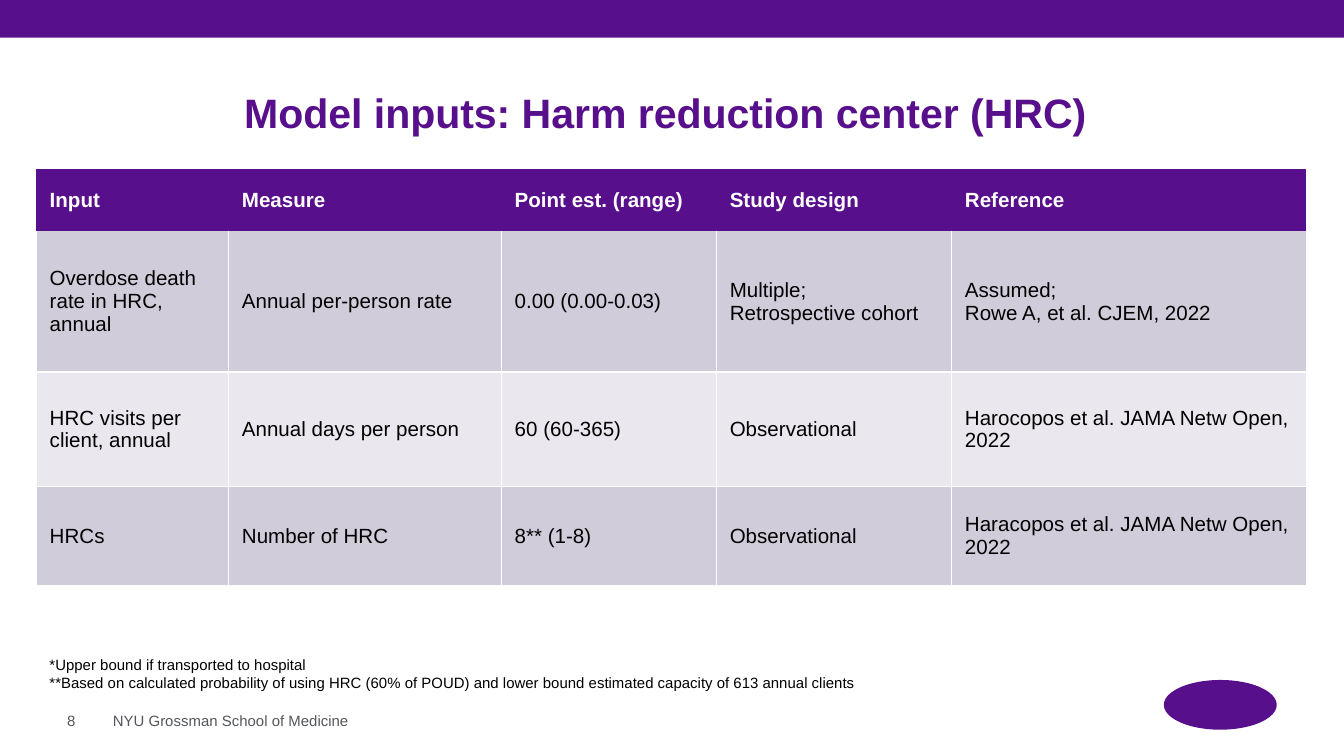
from lxml.etree import SubElement
from pptx import Presentation
from pptx.dml.color import RGBColor
from pptx.enum.shapes import MSO_SHAPE as SHAPE
from pptx.enum.text import MSO_ANCHOR as ANCHOR, PP_ALIGN as ALIGN
from pptx.oxml.ns import qn
from pptx.util import Inches, Pt

COLORS = {
    "purple": "580F8B",
    "band_dark": "D1CCDA",
    "band_light": "EAE7EE",
    "white": "FFFFFF",
    "black": "000000",
    "gray": "53565A",
}
NO_GRID_STYLE = "{2D5ABB26-0587-4C30-8999-92F81FD0307C}"
COLUMNS = [1.43, 2.03, 1.6, 1.75, 2.64]
ROWS = [0.46, 1.05, 0.85, 0.74]
INPUTS = [
    ["Input", "Measure", "Point est. (range)", "Study design", "Reference"],
    ["Overdose death rate in HRC, annual", "Annual per-person rate", "0.00 (0.00-0.03)",
     "Multiple;\nRetrospective cohort", "Assumed;\nRowe A, et al. CJEM, 2022"],
    ["HRC visits per client, annual", "Annual days per person", "60 (60-365)",
     "Observational", "Harocopos et al. JAMA Netw Open, 2022"],
    ["HRCs", "Number of HRC", "8** (1-8)",
     "Observational", "Haracopos et al. JAMA Netw Open, 2022"],
]
FOOTNOTES = (
    "*Upper bound if transported to hospital\n"
    "**Based on calculated probability of using HRC (60% of POUD) "
    "and lower bound estimated capacity of 613 annual clients"
)


def rgb(name):
    return RGBColor.from_string(COLORS[name])


def write_text(tf, text, size=8, color="black", bold=False, align=ALIGN.LEFT, spacing=None):
    tf.word_wrap = True
    for i, line in enumerate(text.split("\n")):
        p = tf.paragraphs[0] if i == 0 else tf.add_paragraph()
        p.alignment = align
        if spacing:
            p.line_spacing = spacing
        r = p.add_run()
        r.text = line
        r.font.name = "Arial"
        r.font.size = Pt(size)
        r.font.bold = bold
        r.font.color.rgb = rgb(color)


def add_text(s, text, box, anchor=ANCHOR.TOP, inset=True, **fmt):
    tf = s.shapes.add_textbox(*map(Inches, box)).text_frame
    tf.vertical_anchor = anchor
    if not inset:
        tf.margin_left = tf.margin_top = tf.margin_right = tf.margin_bottom = 0
    write_text(tf, text, **fmt)


def add_block(s, kind, box):
    sp = s.shapes.add_shape(kind, *map(Inches, box))
    sp.shadow.inherit = False
    sp.fill.solid()
    sp.fill.fore_color.rgb = rgb("purple")
    sp.line.fill.background()


def add_borders(cell, sides):
    tc_pr = cell._tc.get_or_add_tcPr()
    for side in sides:
        ln = SubElement(tc_pr, qn(f"a:ln{side}"), w=str(Pt(1)))
        fill = SubElement(ln, qn("a:solidFill"))
        SubElement(fill, qn("a:srgbClr"), val=COLORS["white"])


def add_inputs_table(s, left, top):
    size = [Inches(sum(COLUMNS)), Inches(sum(ROWS))]
    table = s.shapes.add_table(len(ROWS), len(COLUMNS), Inches(left), Inches(top), *size).table
    table._tbl.tblPr.find(qn("a:tableStyleId")).text = NO_GRID_STYLE
    table.horz_banding = False
    for column, width in zip(table.columns, COLUMNS):
        column.width = Inches(width)
    for i, (row, height) in enumerate(zip(table.rows, ROWS)):
        row.height = Inches(height)
        header = i == 0
        band = "purple" if header else "band_dark" if i % 2 else "band_light"
        for cell, text in zip(row.cells, INPUTS[i]):
            if not header:
                add_borders(cell, "LRB")
            cell.fill.solid()
            cell.fill.fore_color.rgb = rgb(band)
            cell.vertical_anchor = ANCHOR.MIDDLE
            write_text(cell.text_frame, text, size=11, bold=header,
                       color="white" if header else "black")


def main():
    prs = Presentation()
    prs.slide_width = Inches(10)
    prs.slide_height = prs.slide_width * 9 // 16
    s = prs.slides.add_slide(prs.slide_layouts[6])

    add_block(s, SHAPE.RECTANGLE, (0, 0, 10, 0.28))
    add_block(s, SHAPE.OVAL, (8.66, 5.06, 0.84, 0.37))
    add_text(s, "Model inputs: Harm reduction center (HRC) ", (1.68, 0.59, 6.63, 0.43),
             anchor=ANCHOR.BOTTOM, inset=False, size=22, color="purple", bold=True,
             align=ALIGN.CENTER, spacing=0.85)
    for text, left, width in [("NYU Grossman School of Medicine", 0.84, 3.7), ("8", 0.5, 0.28)]:
        add_text(s, text, (left, 5.3, width, 0.13), anchor=ANCHOR.MIDDLE, inset=False, color="gray")
    add_inputs_table(s, 0.27, 1.26)
    add_text(s, FOOTNOTES, (0.27, 4.83, 6.46, 0.61))

    prs.save("out.pptx")


if __name__ == "__main__":
    main()
